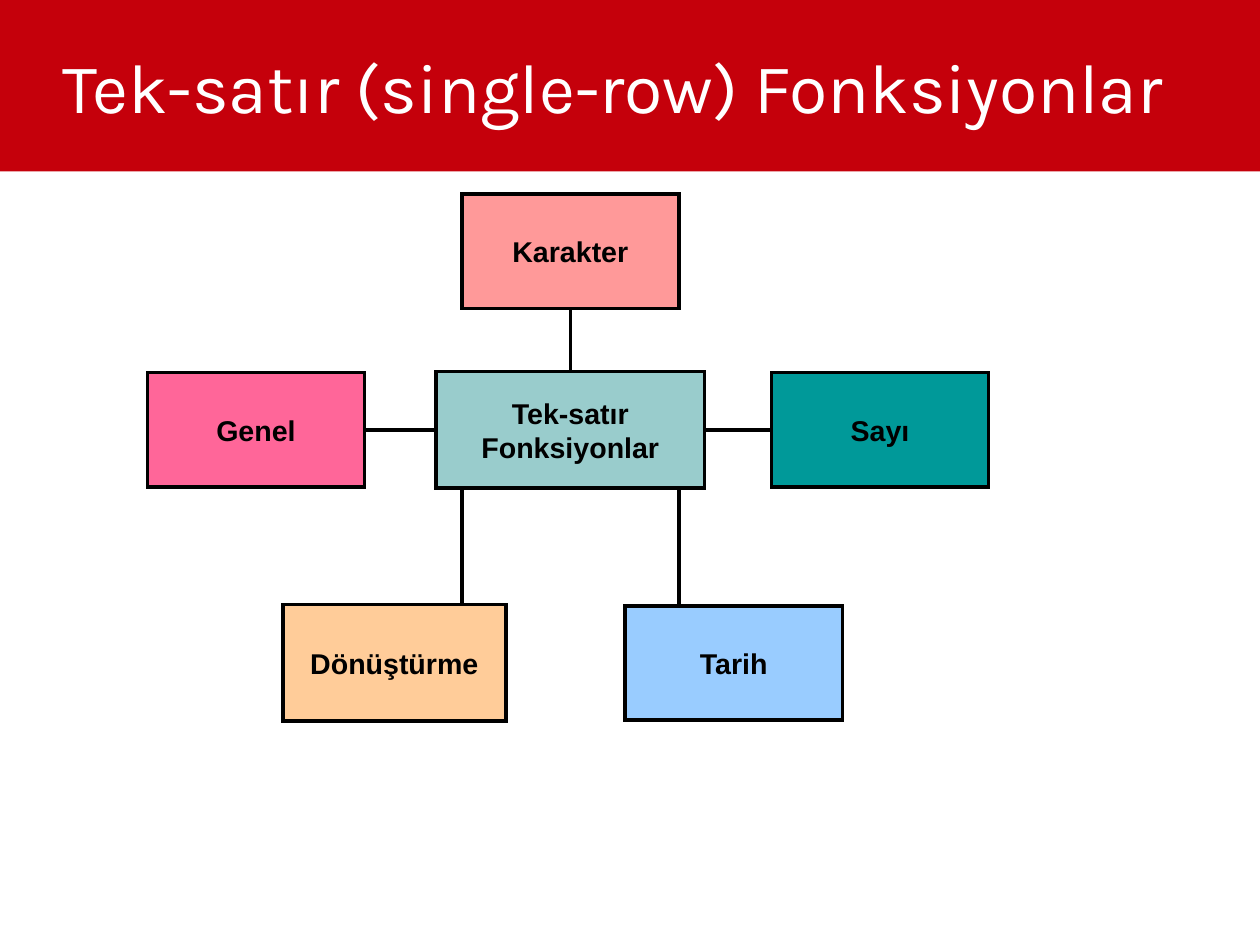
from lxml.etree import SubElement
from pptx import Presentation
from pptx.dml.color import RGBColor
from pptx.enum.shapes import MSO_CONNECTOR, MSO_SHAPE
from pptx.enum.text import MSO_ANCHOR, MSO_AUTO_SIZE, PP_ALIGN
from pptx.oxml.ns import qn
from pptx.util import Cm, Inches, Pt

HUB_X, HUB_Y = 3.7, 2.06
BRANCHES = [
    ("Dönüştürme", "FFCC99", 2.16, 4.1, 1.95, 1.02),
    ("Karakter", "FF9999", HUB_X, 0.5, 1.9, 1),
    ("Sayı", "009999", 6.41, HUB_Y, 1.9, 1),
    ("Tarih", "99CCFF", 5.13, 4.1, 1.9, 1),
    ("Genel", "FF6699", 0.95, HUB_Y, 1.9, 1),
]
HUB = ("Tek-satır\nFonksiyonlar", "99CCCC", HUB_X, HUB_Y, 2.35, 1.02)
LINK_SHIFT = 0.95


def color(hex_value):
    """Turn a hex string into a colour."""
    return RGBColor.from_string(hex_value)


def style_font(font, name, size, hex_value, bold=False):
    """Set face, size, colour and weight of a font."""
    font.name, font.size, font.bold = name, Pt(size), bold
    font.color.rgb = color(hex_value)


def style_line(line):
    """Make a line black and 2.25 points wide."""
    line.color.rgb = color("000000")
    line.width = Pt(2.25)


def add_rectangle(slide, left, top, width, height, fill):
    """Add a flat filled rectangle."""
    rectangle = slide.shapes.add_shape(
        MSO_SHAPE.RECTANGLE, Inches(left), Inches(top), Inches(width), Inches(height))
    rectangle.shadow.inherit = False
    rectangle.fill.solid()
    rectangle.fill.fore_color.rgb = color(fill)
    return rectangle


def add_header(slide, left, top, width, height):
    """Place the red band and the title on it."""
    band = add_rectangle(slide, left, top, width, height, "C5000B")
    band.line.fill.background()
    title = slide.shapes.title
    title._element.addprevious(band._element)
    title.left, title.top = Inches(left + 0.55), Inches(top + 0.06)
    title.width, title.height = Inches(width - 0.55), Inches(height - 0.12)
    frame = title.text_frame
    frame.text = "Tek-satır (single-row) Fonksiyonlar"
    frame.margin_left = frame.margin_right = frame.margin_top = frame.margin_bottom = 0
    frame.vertical_anchor = MSO_ANCHOR.MIDDLE
    frame.auto_size = MSO_AUTO_SIZE.NONE
    frame.word_wrap = True
    heading = frame.paragraphs[0]
    heading.alignment = PP_ALIGN.LEFT
    style_font(heading.font, "Karla", 44, "FFFFFF")


def add_link(slide, start_x, start_y, end_x, end_y):
    """Draw a black line between two points."""
    link = slide.shapes.add_connector(
        MSO_CONNECTOR.STRAIGHT, Inches(start_x), Inches(start_y), Inches(end_x), Inches(end_y))
    style_line(link.line)
    SubElement(link._element.spPr, qn("a:effectLst"))


def add_node(slide, label, fill, center_x, center_y, width, height):
    """Add a labelled box with sharp corners around its centre."""
    node = add_rectangle(
        slide, center_x - width / 2, center_y - height / 2, width, height, fill)
    style_line(node.line)
    SubElement(node._element.spPr.find(qn("a:ln")), qn("a:miter"), lim="800000")
    frame = node.text_frame
    frame.text = label
    frame.word_wrap = False
    frame.vertical_anchor = MSO_ANCHOR.MIDDLE
    for paragraph in frame.paragraphs:
        paragraph.alignment = PP_ALIGN.CENTER
        style_font(paragraph.font, "Arial", 18, "000000", bold=True)


def add_function_map(slide, left, top):
    """Place the hub, its branches and their links from the given corner."""
    hub_x, hub_y = left + HUB_X, top + HUB_Y
    for _, _, x, y, _, _ in BRANCHES:
        if y > HUB_Y:
            link_x = hub_x + (LINK_SHIFT if x > HUB_X else -LINK_SHIFT)
            add_link(slide, link_x, hub_y + 0.4, link_x, top + y - 0.49)
        else:
            add_link(slide, hub_x, hub_y, left + x, top + y)
    for label, fill, x, y, width, height in BRANCHES + [HUB]:
        add_node(slide, label, fill, left + x, top + y, width, height)


def main():
    """Build and save the slide."""
    presentation = Presentation()
    presentation.slide_width = Cm(28)
    presentation.slide_height = Cm(21)
    slide = presentation.slides.add_slide(presentation.slide_layouts.get_by_name("Title Only"))
    add_header(slide, 0, 0, presentation.slide_width.inches, 1.5)
    add_function_map(slide, 1.29, 1.7)
    presentation.save("out.pptx")


if __name__ == "__main__":
    main()
